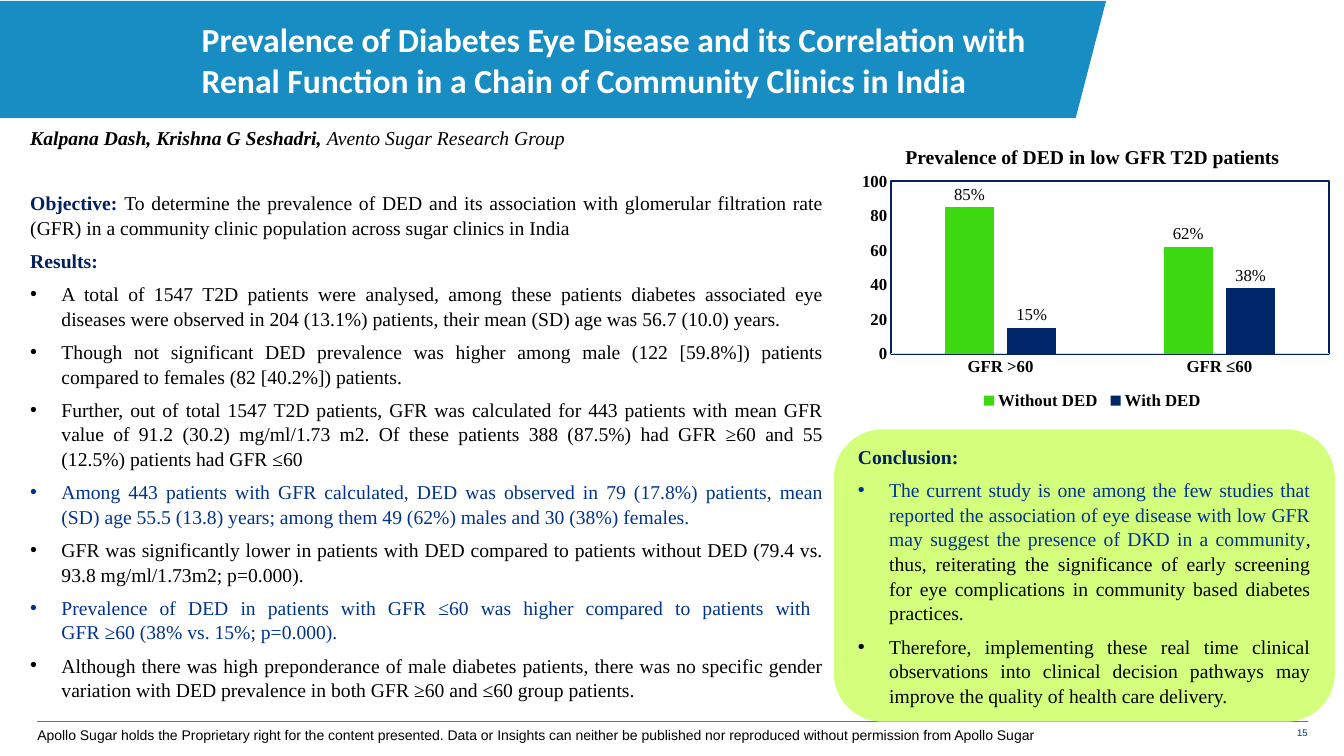
from lxml import etree
from pptx import Presentation
from pptx.chart.data import CategoryChartData
from pptx.dml.color import RGBColor
from pptx.enum.chart import XL_CHART_TYPE, XL_LABEL_POSITION, XL_LEGEND_POSITION, XL_TICK_MARK
from pptx.enum.shapes import MSO_CONNECTOR, MSO_SHAPE
from pptx.enum.text import MSO_ANCHOR, MSO_AUTO_SIZE, PP_ALIGN
from pptx.oxml import parse_xml
from pptx.oxml.ns import nsdecls, qn
from pptx.util import Inches, Pt

COLUMNS = XL_CHART_TYPE.COLUMN_CLUSTERED
OUTSIDE = XL_LABEL_POSITION.OUTSIDE_END
BOTTOM = XL_LEGEND_POSITION.BOTTOM
NO_TICK = XL_TICK_MARK.NONE
ROUNDED = MSO_SHAPE.ROUNDED_RECTANGLE
STRAIGHT = MSO_CONNECTOR.STRAIGHT
TOP, MIDDLE = MSO_ANCHOR.TOP, MSO_ANCHOR.MIDDLE
LEFT, RIGHT, JUSTIFY = PP_ALIGN.LEFT, PP_ALIGN.RIGHT, PP_ALIGN.JUSTIFY
NO_FIT = MSO_AUTO_SIZE.NONE

SERIF, SANS, HEAD = "Times New Roman", "Arial", "Calibri"
BLACK, WHITE, BLUE, NAVY, BAND = "000000", "FFFFFF", "00338D", "002060", "188DC3"

# Each paragraph: (bulleted, space before, [(text, colour, bold, italic), ...])
FINDINGS = [
    (False, 0, [("Kalpana Dash, Krishna G Seshadri, ", BLACK, True, True),
                ("Avento Sugar Research Group", BLACK, False, True)]),
    (False, 28.8, [("Objective: ", NAVY, True, False),
                   ("To determine the prevalence of DED and its association with glomerular filtration rate "
                    "(GFR) in a community clinic population across sugar clinics in India", BLACK, False, False)]),
    (False, 6, [("Results:", NAVY, True, False)]),
] + [(True, 6, [(text, color, False, False)]) for text, color in [
    ("A total of 1547 T2D patients were analysed, among these patients diabetes associated eye diseases "
     "were observed in 204 (13.1%) patients, their mean (SD) age was 56.7 (10.0) years.", BLACK),
    ("Though not significant DED prevalence was higher among male (122 [59.8%]) patients compared to "
     "females (82 [40.2%]) patients.", BLACK),
    ("Further, out of total 1547 T2D patients, GFR was calculated for 443 patients with mean GFR value of "
     "91.2 (30.2) mg/ml/1.73 m2. Of these patients 388 (87.5%) had GFR ≥60 and 55 (12.5%) patients had "
     "GFR ≤60", BLACK),
    ("Among 443 patients with GFR calculated, DED was observed in 79 (17.8%) patients, mean (SD) age 55.5 "
     "(13.8) years; among them 49 (62%) males and 30 (38%) females.", BLUE),
    ("GFR was significantly lower in patients with DED compared to patients without DED (79.4 vs. 93.8 "
     "mg/ml/1.73m2; p=0.000).", BLACK),
    ("Prevalence of DED in patients with GFR ≤60 was higher compared to patients with \v"
     "GFR ≥60 (38% vs. 15%; p=0.000).", BLUE),
    ("Although there was high preponderance of male diabetes patients, there was no specific gender "
     "variation with DED prevalence in both GFR ≥60 and ≤60 group patients.", BLACK),
]]

CONCLUSION = [
    (False, 0, [("Conclusion:", NAVY, True, False)]),
    (True, 6, [("The current study is one among the few studies that reported the association of eye disease "
                "with low GFR may suggest the presence of DKD in a community", BLUE, False, False),
               (", thus, reiterating the significance of early screening for eye complications in community "
                "based diabetes practices.", BLACK, False, False)]),
    (True, 6, [("Therefore, implementing these real time clinical observations into clinical decision "
                "pathways may improve the quality of health care delivery.", BLACK, False, False)]),
]

SERIES = [("Without DED", (85, 62), "3CD911"), ("With DED", (15, 38), "00266A")]


def rgb(color):
    return RGBColor.from_string(color)


def style(font, name, size, color, bold=False, italic=False):
    font.name, font.size, font.bold, font.italic = name, Pt(size), bold, italic
    font.color.rgb = rgb(color)


def place(sp, x, y, w, h):
    sp.left, sp.top, sp.width, sp.height = Inches(x), Inches(y), Inches(w), Inches(h)


def set_bullet(p, bulleted):
    pPr = p._p.get_or_add_pPr()
    hang = Inches(0.31) if bulleted else 0
    pPr.set("marL", str(hang))
    pPr.set("indent", str(-hang))
    if bulleted:
        etree.SubElement(pPr, qn("a:buFont")).set("typeface", SANS)
        etree.SubElement(pPr, qn("a:buChar")).set("char", "•")
    else:
        etree.SubElement(pPr, qn("a:buNone"))


def fill_text(tf, paragraphs):
    tf.word_wrap, tf.auto_size = True, NO_FIT
    for i, (bulleted, before, segments) in enumerate(paragraphs):
        p = tf.paragraphs[0] if i == 0 else tf.add_paragraph()
        set_bullet(p, bulleted)
        p.alignment, p.line_spacing, p.space_before = JUSTIFY, 1.05, Pt(before)
        for text, color, bold, italic in segments:
            for j, line in enumerate(text.split("\v")):
                if j:
                    p.add_line_break()
                r = p.add_run()
                r.text = line
                style(r.font, SERIF, 14, color, bold, italic)


def add_label(s, x, y, w, h, text, name, size, color, bold=False, align=LEFT, inset=0):
    sp = s.shapes.add_textbox(Inches(x), Inches(y), Inches(w), Inches(h))
    tf = sp.text_frame
    tf.word_wrap = True
    tf.margin_left = tf.margin_right = tf.margin_bottom = 0
    tf.margin_top = Inches(inset)
    tf.text = text
    p = tf.paragraphs[0]
    p.alignment = align
    style(p.runs[0].font, name, size, color, bold)


def add_header(s, w, h):
    # Slanted band behind the title
    builder = s.shapes.build_freeform(Inches(w), Inches(0.01))
    builder.add_line_segments([(Inches(a), Inches(b)) for a, b in
                               [(0, 0.01), (0, h), (w - 0.3, h)]], close=True)
    band = builder.convert_to_shape()
    band.shadow.inherit = False
    band.fill.solid()
    band.fill.fore_color.rgb = rgb(BAND)
    band.line.fill.background()
    # Title
    title = s.shapes.title
    title.element.addprevious(band.element)
    place(title, 2, 0.1, w - 2.29, h - 0.19)
    tf = title.text_frame
    tf.text = ("Prevalence of Diabetes Eye Disease and its Correlation with "
               "Renal Function in a Chain of Community Clinics in India")
    tf.word_wrap, tf.auto_size, tf.vertical_anchor = True, NO_FIT, MIDDLE
    tf.margin_left = tf.margin_right = tf.margin_top = tf.margin_bottom = 0
    tf.paragraphs[0].alignment = LEFT
    style(tf.paragraphs[0].runs[0].font, HEAD, 24, WHITE, True)


def add_findings(s, x, y, w, h):
    body = s.placeholders[1]
    place(body, x, y, w, h)
    body.text_frame.vertical_anchor = TOP
    fill_text(body.text_frame, FINDINGS)


def set_layout(parent, index, x, y, w, h, inner=False):
    for old in parent.findall(qn("c:layout")):
        parent.remove(old)
    target = '<c:layoutTarget val="inner"/>' if inner else ""
    sizes = "".join(f'<c:{k} val="{v}"/>' for k, v in zip("xywh", (x, y, w, h)))
    parent.insert(index, parse_xml(
        f'<c:layout {nsdecls("c")}><c:manualLayout>{target}<c:xMode val="edge"/>'
        f'<c:yMode val="edge"/>{sizes}</c:manualLayout></c:layout>'))


def add_prevalence_chart(s, x, y, w, h):
    data = CategoryChartData(number_format='0"%"')
    data.categories = ["GFR >60", "GFR ≤60"]
    for name, values, _ in SERIES:
        data.add_series(name, values)
    chart = s.shapes.add_chart(COLUMNS, Inches(x), Inches(y), Inches(w), Inches(h), data).chart
    chart.has_title = False
    style(chart.font, SERIF, 12, BLACK, True)
    # Columns and their labels
    plot = chart.plots[0]
    plot.vary_by_categories, plot.gap_width, plot.overlap = False, 219, -27
    for series, (_, _, color) in zip(plot.series, SERIES):
        series.format.fill.solid()
        series.format.fill.fore_color.rgb = rgb(color)
        labels = series.data_labels
        labels.show_value, labels.position = True, OUTSIDE
        labels.number_format, labels.number_format_is_linked = '0"%"', False
        style(labels.font, SERIF, 12, BLACK)
    # Axes
    for axis in (chart.category_axis, chart.value_axis):
        axis.major_tick_mark = axis.minor_tick_mark = NO_TICK
        axis.has_major_gridlines = False
        style(axis.tick_labels.font, SERIF, 12, BLACK, True)
    chart.category_axis.format.line.color.rgb = rgb("D9D9D9")
    chart.category_axis.format.line.width = Pt(0.75)
    values = chart.value_axis
    values.minimum_scale, values.maximum_scale, values.major_unit = 0, 100, 20
    values.tick_labels.number_format, values.tick_labels.number_format_is_linked = "0", False
    values.format.line.fill.background()
    # Legend and framed plot area
    chart.has_legend = True
    chart.legend.position, chart.legend.include_in_layout = BOTTOM, False
    style(chart.legend.font, SERIF, 12, BLACK, True)
    set_layout(chart.legend._element, 1, 0.27, 0.84, 0.46, 0.09)
    area = chart.element.find(".//" + qn("c:plotArea"))
    set_layout(area, 0, 0.1, 0.16, 0.87, 0.57, inner=True)
    area.append(parse_xml(
        f'<c:spPr {nsdecls("c", "a")}><a:noFill/><a:ln w="{Pt(1.5)}"><a:solidFill>'
        f'<a:srgbClr val="{NAVY}"/></a:solidFill></a:ln></c:spPr>'))
    # Heading above the plot
    add_label(s, x + 0.64, y + 0.12, 4, 0.27, "Prevalence of DED in low GFR T2D patients",
              SERIF, 14, BLACK, True)


def add_conclusion(s, x, y, w, h):
    sp = s.shapes.add_shape(ROUNDED, Inches(x), Inches(y), Inches(w), Inches(h))
    sp.shadow.inherit = False
    sp.fill.solid()
    sp.fill.fore_color.rgb = rgb("D3FF7D")
    sp.line.fill.background()
    sp.text_frame.vertical_anchor = MIDDLE
    fill_text(sp.text_frame, CONCLUSION)


def add_footer(s, x, y, w):
    rule = s.shapes.add_connector(STRAIGHT, Inches(x), Inches(y), Inches(x + w), Inches(y))
    rule.line.color.rgb = rgb(BAND)
    rule.line.width = Pt(0.25)
    etree.SubElement(rule.element.spPr, qn("a:effectLst"))
    add_label(s, x, y + 0.06, 10.6, 0.2,
              "Apollo Sugar holds the Proprietary right for the content presented. Data or Insights can "
              "neither be published nor reproduced without permission from Apollo Sugar", SANS, 10, BLACK)
    add_label(s, x + w - 0.68, y, 0.68, 0.31, "15", SANS, 6.8, BLUE, align=RIGHT, inset=0.06)


def main():
    prs = Presentation()
    prs.slide_width, prs.slide_height = Inches(13.33), Inches(7.5)
    s = prs.slides.add_slide(prs.slide_layouts[1])
    add_header(s, 10.97, 1.17)
    add_footer(s, 0.37, 7.15, 12.6)
    add_findings(s, 0.2, 1.19, 8.07, 5.97)
    add_prevalence_chart(s, 8.34, 1.32, 4.99, 3)
    add_conclusion(s, 8.27, 4.26, 4.97, 2.9)
    prs.save("out.pptx")


if __name__ == "__main__":
    main()
